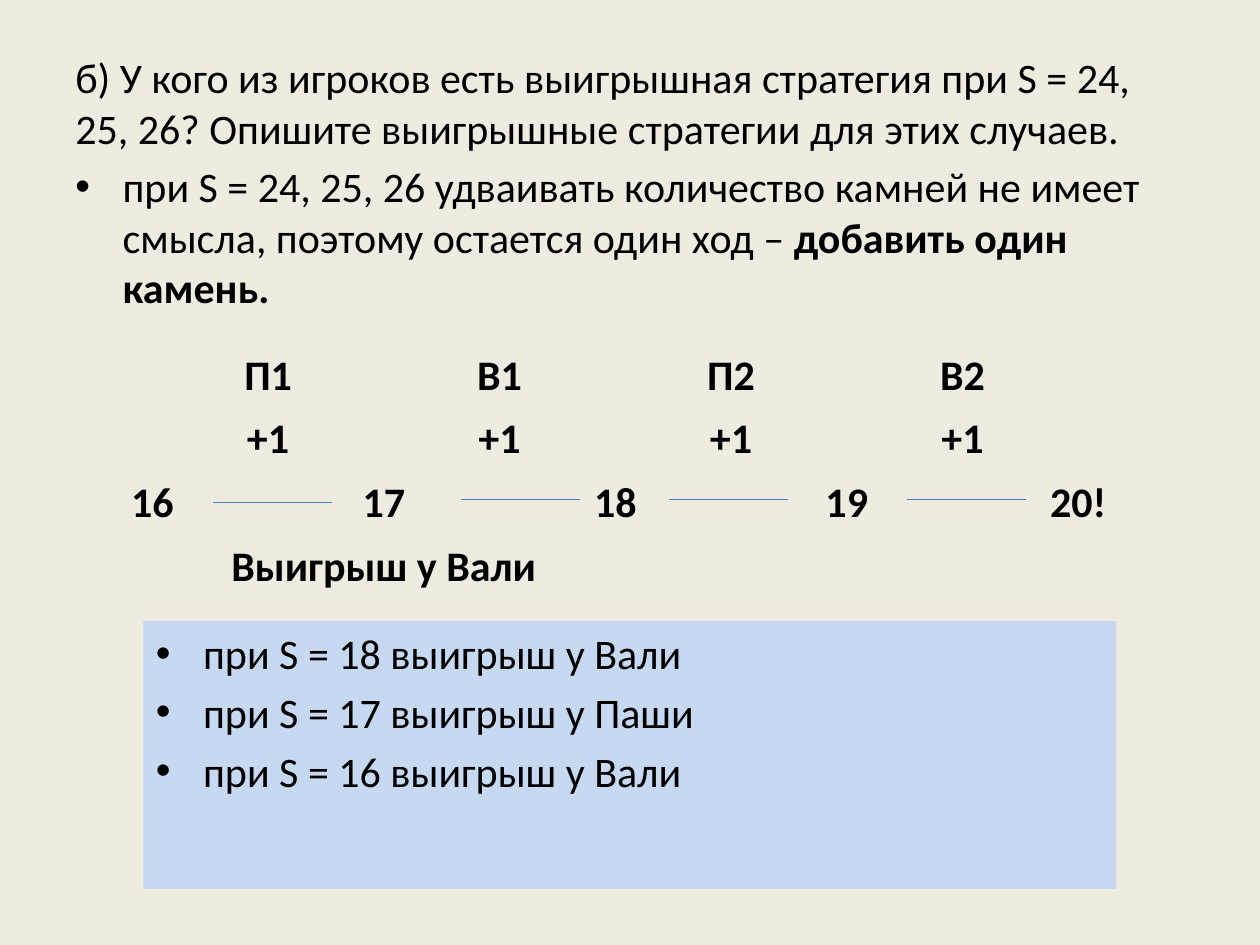
"""Build the slide on winning strategies in the stones game."""
from lxml import etree
from pptx import Presentation
from pptx import util as u
from pptx.dml.color import RGBColor
from pptx.enum import shapes, text
from pptx.oxml.ns import qn

COLORS = {"paper": "EEECE1", "ink": "000000", "line": "4B7EBC", "panel": "C6D9F1"}
FONT = {"name": "Calibri", "size": u.Pt(24)}
INDENT = 27
NO_GRID_STYLE = "{2D5ABB26-0587-4C30-8999-92F81FD0307C}"

QUESTION = [
    (False, [("б) У кого из игроков есть выигрышная стратегия при S = 24, 25, 26? "
              "Опишите выигрышные стратегии для этих случаев.", False)]),
    (True, [("при S = 24, 25, 26 удваивать количество камней не имеет смысла, "
             "поэтому остается один ход – ", False),
            ("добавить один камень.", True)]),
]
RESULTS = [(18, "Вали"), (17, "Паши"), (16, "Вали")]
MOVES = ["П1", "В1", "П2", "В2"]
STEP = "+1"
PILES = ["16", "17", "18", "19", "20!"]
OUTCOME = "Выигрыш у Вали"

QUESTION_BOX = (36, 26, 648, 164)
RESULTS_BOX = (82, 355, 556, 153)
TABLE_LEFT, TABLE_TOP, COLUMN, ROW = 54, 196.5, 66.15, 36.5
LINE_LENGTH = 68
LINE_STARTS = [(121.5, 287), (263.5, 285.5), (382.5, 285.5), (518.5, 285.5)]


def color(name):
    return RGBColor.from_string(COLORS[name])


def points(values):
    return [u.Pt(value) for value in values]


def add_span(para, words, bold):
    span = para.add_run()
    span.text = words
    for key, value in {**FONT, "bold": bold}.items():
        setattr(span.font, key, value)
    span.font.color.rgb = color("ink")


def add_bullet(para):
    properties = para._p.get_or_add_pPr()
    properties.set("marL", str(u.Pt(INDENT)))
    properties.set("indent", str(-u.Pt(INDENT)))
    etree.SubElement(properties, qn("a:buFont")).set("typeface", "Arial")
    etree.SubElement(properties, qn("a:buChar")).set("char", "•")


def write(frame, paragraphs):
    frame.word_wrap = True
    frame.vertical_anchor = text.MSO_ANCHOR.TOP
    for index, (bulleted, spans) in enumerate(paragraphs):
        para = frame.add_paragraph() if index else frame.paragraphs[0]
        para.alignment = text.PP_ALIGN.LEFT
        para.space_before = u.Pt(4.8)
        if bulleted:
            add_bullet(para)
        for words, bold in spans:
            add_span(para, words, bold)


def add_moves_table(page):
    columns = 2 * len(MOVES) + 1
    grid = [[""] * columns for _ in range(4)]
    grid[0][1::2] = MOVES
    grid[1][1::2] = [STEP] * len(MOVES)
    grid[2][::2] = PILES
    grid[3][0] = OUTCOME
    place = points((TABLE_LEFT, TABLE_TOP, columns * COLUMN, len(grid) * ROW))
    table = page.shapes.add_table(len(grid), columns, *place).table
    table.first_row = table.horz_banding = False
    table._tbl.tblPr.find(qn("a:tableStyleId")).text = NO_GRID_STYLE
    for column in table.columns:
        column.width = u.Pt(COLUMN)
    for row, values in enumerate(grid):
        table.rows[row].height = u.Pt(ROW)
        for column, value in enumerate(values):
            cell = table.cell(row, column)
            cell.fill.background()
            if value:
                para = cell.text_frame.paragraphs[0]
                para.alignment = text.PP_ALIGN.CENTER
                add_span(para, value, True)
    table.cell(3, 0).merge(table.cell(3, 4))


def add_line(page, left, top):
    ends = points((left, top, left + LINE_LENGTH, top))
    line = page.shapes.add_connector(shapes.MSO_CONNECTOR.STRAIGHT, *ends)
    line.line.color.rgb = color("line")
    line.line.width = u.Pt(0.75)
    etree.SubElement(line._element.spPr, qn("a:effectLst"))


def main():
    deck = Presentation()
    deck.slide_width, deck.slide_height = points((720, 540))
    page = deck.slides.add_slide(deck.slide_layouts[6])
    page.background.fill.solid()
    page.background.fill.fore_color.rgb = color("paper")

    question = page.shapes.add_textbox(*points(QUESTION_BOX))
    write(question.text_frame, QUESTION)
    add_moves_table(page)
    for left, top in LINE_STARTS:
        add_line(page, left, top)

    panel = page.shapes.add_shape(shapes.MSO_SHAPE.RECTANGLE, *points(RESULTS_BOX))
    panel.shadow.inherit = False
    panel.fill.solid()
    panel.fill.fore_color.rgb = color("panel")
    panel.line.fill.background()
    write(panel.text_frame, [(True, [(f"при S = {stones} выигрыш у {winner}", False)])
                             for stones, winner in RESULTS])
    deck.save("out.pptx")


if __name__ == "__main__":
    main()
